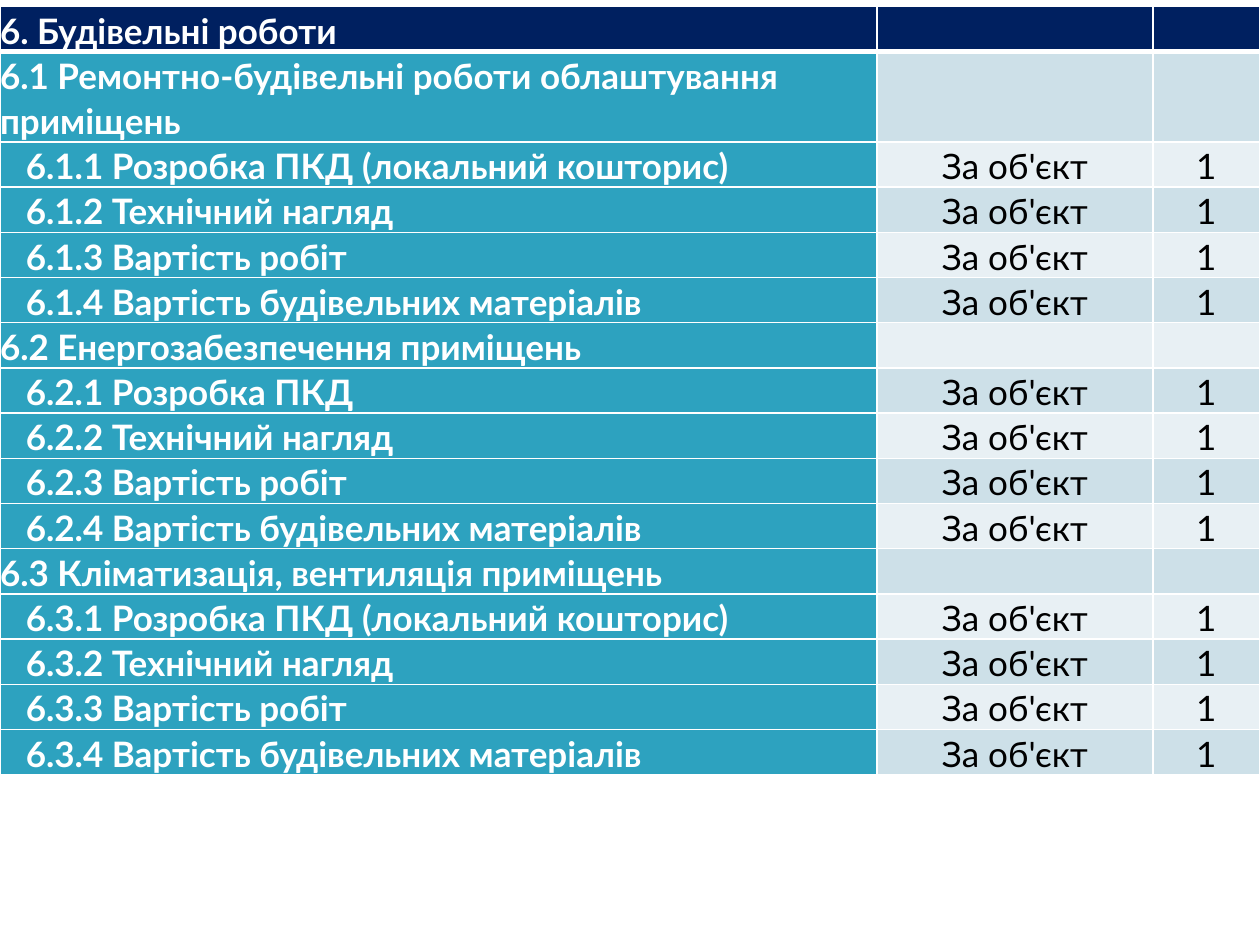
import pptx
import pptx.dml.color
import pptx.enum.text
import pptx.oxml
import pptx.oxml.ns
import pptx.util

Cm = pptx.util.Cm
Pt = pptx.util.Pt
Anchor = pptx.enum.text.MSO_ANCHOR
Align = pptx.enum.text.PP_ALIGN

NAVY, TEAL, WHITE, BLACK = "002060", "2DA2BF", "FFFFFF", "000000"
BANDS = ["E8F0F4", "CDE0E8"]
UNIT = "За об'єкт"

# Level of each row and its wording
ROWS = [
    (0, "6. Будівельні роботи"),
    (1, "6.1 Ремонтно-будівельні роботи облаштування приміщень"),
    (2, "6.1.1 Розробка ПКД (локальний кошторис)"),
    (2, "6.1.2 Технічний нагляд"),
    (2, "6.1.3 Вартість робіт"),
    (2, "6.1.4 Вартість будівельних матеріалів"),
    (1, "6.2 Енергозабезпечення приміщень"),
    (2, "6.2.1 Розробка ПКД"),
    (2, "6.2.2 Технічний нагляд"),
    (2, "6.2.3 Вартість робіт"),
    (2, "6.2.4 Вартість будівельних матеріалів"),
    (1, "6.3 Кліматизація, вентиляція приміщень"),
    (2, "6.3.1 Розробка ПКД (локальний кошторис)"),
    (2, "6.3.2 Технічний нагляд"),
    (2, "6.3.3 Вартість робіт"),
    (2, "6.3.4 Вартість будівельних матеріалів"),
]


def color(code):
    return pptx.dml.color.RGBColor.from_string(code)


def border(cell, side, width):
    """Add a white line, width in points, on side L, R, T or B."""
    space = pptx.oxml.ns.nsdecls("a")
    line = pptx.oxml.parse_xml(
        f'<a:ln{side} {space} w="{Pt(width)}"><a:solidFill>'
        f'<a:srgbClr val="{WHITE}"/></a:solidFill></a:ln{side}>')
    cell._tc.get_or_add_tcPr().append(line)


deck = pptx.Presentation()
deck.slide_width, deck.slide_height = Cm(25.4), Cm(19.05)
slide = deck.slides.add_slide(deck.slide_layouts[6])

frame = slide.shapes.add_table(
    len(ROWS), 3, Cm(0), Cm(0.13), Cm(25.4), Cm(14.66))
table = frame.table
for column, width in zip(table.columns, [17.68, 5.56, 2.16]):
    column.width = Cm(width)

for r, (level, title) in enumerate(ROWS):
    # A low minimum lets each row fit its text
    table.rows[r].height = Cm(0.3)
    texts = [title, UNIT, "1"] if level == 2 else [title, "", ""]
    for c, text in enumerate(texts):
        cell = table.cell(r, c)
        first = c == 0
        for side in "LRTB":
            heavy = (r, side) in [(0, "B"), (1, "T")]
            border(cell, side, 3 if heavy else 1)
        cell.fill.solid()
        shade = NAVY if level == 0 else TEAL if first else BANDS[r % 2]
        cell.fill.fore_color.rgb = color(shade)
        cell.margin_left = Cm(0.52) if first and level == 2 else 0
        cell.margin_right = cell.margin_top = cell.margin_bottom = 0
        cell.vertical_anchor = Anchor.MIDDLE if first else Anchor.BOTTOM
        cell.text = text
        para = cell.text_frame.paragraphs[0]
        para.alignment = Align.LEFT if first else Align.CENTER
        para.line_spacing = 1.07
        para.font.name = "Lato"
        para.font.size = Pt(20)
        para.font.bold = first
        para.font.color.rgb = color(WHITE if first else BLACK)

frame.height = Cm(14.66)
deck.save("out.pptx")
